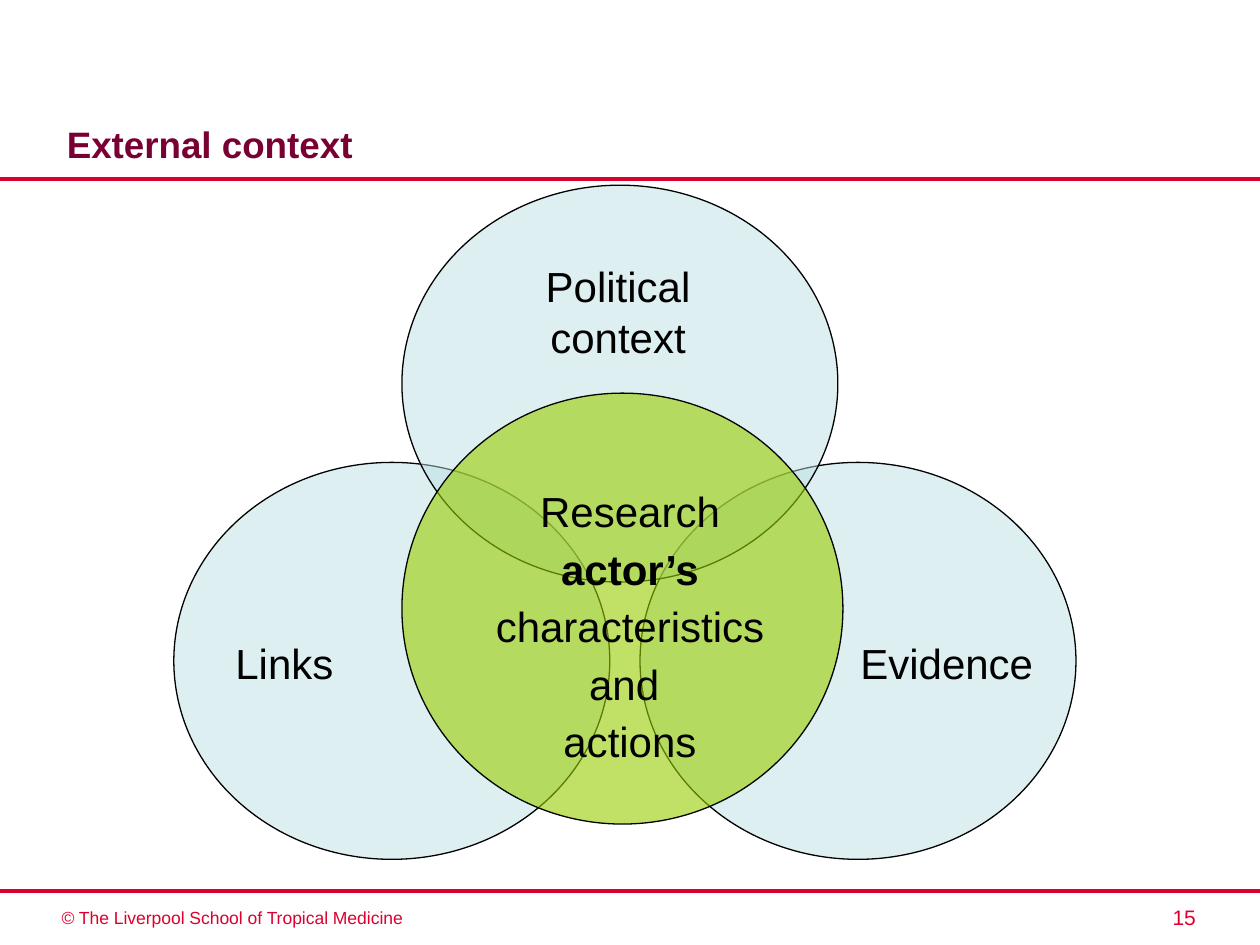
from pptx import Presentation
from pptx.dml.color import RGBColor
from pptx.enum.shapes import MSO_CONNECTOR, MSO_SHAPE
from pptx.enum.text import MSO_ANCHOR, MSO_AUTO_SIZE, PP_ALIGN as Align
from pptx.oxml.ns import qn
from pptx.util import Inches, Pt
from lxml.etree import SubElement

COLORS = {
    "red": "DC002E",
    "maroon": "790033",
    "black": "000000",
    "pale blue": "BBE0E3",
    "green": "99CC00",
}


class SlideBuilder:
    font_name = "Arial"
    label_size = 24

    def __init__(self, slide):
        self.slide = slide

    def color(self, name):
        return RGBColor.from_string(COLORS[name])

    def format(self, paragraph, size, color, align=Align.LEFT, bold=None):
        paragraph.alignment = align
        font = paragraph.font
        font.name, font.size, font.bold = self.font_name, Pt(size), bold
        font.color.rgb = self.color(color)

    def title(self, text, left, top, width, height):
        title = self.slide.shapes.title
        title.left, title.top = Inches(left), Inches(top)
        title.width, title.height = Inches(width), Inches(height)
        frame = title.text_frame
        frame.text = text
        frame.word_wrap = True
        frame.auto_size = MSO_AUTO_SIZE.NONE
        frame.vertical_anchor = MSO_ANCHOR.TOP
        self.format(frame.paragraphs[0], 21, "maroon", bold=True)

    def rule(self, y):
        line = self.slide.shapes.add_connector(
            MSO_CONNECTOR.STRAIGHT, 0, Inches(y), Inches(10), Inches(y))
        line.line.color.rgb = self.color("red")
        line.line.width = Pt(2.25)
        SubElement(line._element.spPr, qn("a:effectLst"))

    def circle(self, left, top, width, height, color, opacity):
        shape = self.slide.shapes.add_shape(
            MSO_SHAPE.OVAL, Inches(left), Inches(top), Inches(width), Inches(height))
        shape.shadow.inherit = False
        shape.fill.solid()
        shape.fill.fore_color.rgb = self.color(color)
        fill = shape._element.spPr.find(qn("a:solidFill"))
        SubElement(fill[0], qn("a:alpha"), val=str(opacity * 1000))
        shape.line.color.rgb = self.color("black")
        shape.line.width = Pt(0.75)

    def text(self, paragraphs, left, top, width, height, size=label_size,
             color="black", align=Align.LEFT, line_spacing=None):
        """Each paragraph is a list of (text, bold) runs."""
        box = self.slide.shapes.add_textbox(
            Inches(left), Inches(top), Inches(width), Inches(height))
        frame = box.text_frame
        frame.word_wrap = True
        for index, runs in enumerate(paragraphs):
            paragraph = frame.add_paragraph() if index else frame.paragraphs[0]
            self.format(paragraph, size, color, align)
            paragraph.line_spacing = line_spacing
            for words, bold in runs:
                run = paragraph.add_run()
                run.text = words
                if bold:
                    run.font.bold = True

    def label(self, words, *position, **style):
        self.text([[(words, False)]], *position, **style)


def main():
    presentation = Presentation()
    presentation.slide_width, presentation.slide_height = Inches(10), Inches(7.5)
    slide = presentation.slides.add_slide(presentation.slide_layouts[5])
    builder = SlideBuilder(slide)

    # Title, rules and footer
    builder.title("External context", 0.43, 0.92, 7.08, 0.67)
    for y in (1.42, 7.07):
        builder.rule(y)
    builder.label("15", 7.76, 7.13, 1.83, 0.3, size=12, color="red", align=Align.RIGHT)
    builder.label("© The Liverpool School of Tropical Medicine",
                  0.39, 7.15, 3.95, 0.27, size=10, color="red")

    # Overlapping circles
    for left, top in ((5.08, 3.67), (1.38, 3.67), (3.19, 1.47)):
        builder.circle(left, top, 3.46, 3.15, "pale blue", 49)
    builder.circle(3.19, 3.12, 3.5, 3.42, "green", 60)

    # Circle labels
    builder.label("Political context", 3.98, 2.02, 1.85, 0.92, align=Align.CENTER)
    builder.label("Evidence", 6.73, 5.01, 1.64, 0.5)
    builder.label("Links", 1.77, 5.01, 1.18, 0.5)
    builder.text(
        [[("Research ", False), ("actor’s ", True), ("characteristics and ", False)],
         [("actions", False)]],
        3.82, 3.75, 2.36, 2.4, align=Align.CENTER, line_spacing=1.14)

    presentation.save("out.pptx")


if __name__ == "__main__":
    main()
